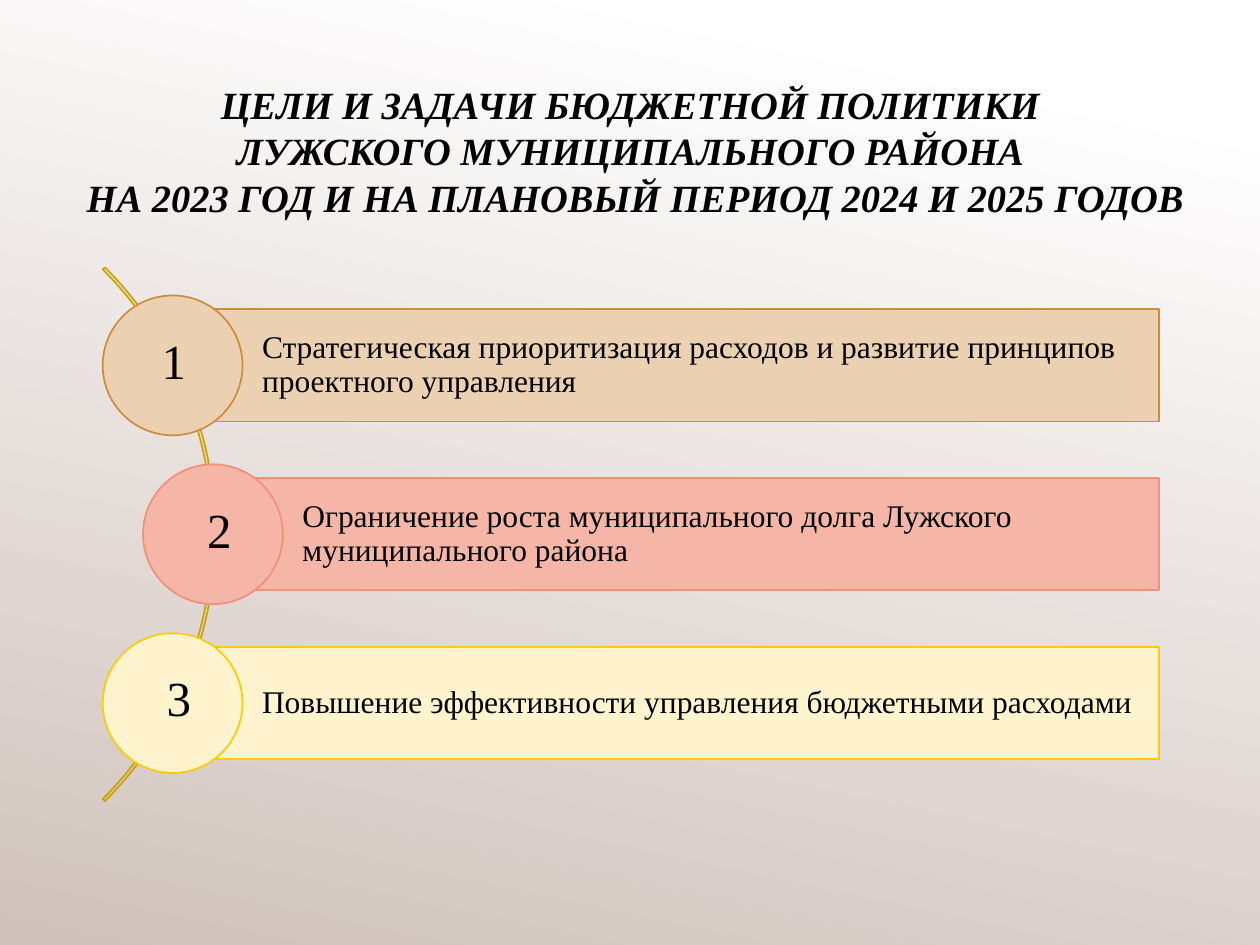
from dataclasses import dataclass

from pptx import Presentation
from pptx.dml.color import RGBColor
from pptx.enum import shapes, text
from pptx.util import Inches, Pt


@dataclass(frozen=True)
class Theme:
    font: str = "Times New Roman"
    ink: str = "000000"
    arc: str = "CCA206"
    backdrop: tuple = ((0.1, "FFFFFF"), (1.0, "D0C2BC"))
    backdrop_angle: int = 258  # counter-clockwise
    title_size: int = 22
    goal_size: int = 18
    number_size: int = 28
    line_width: int = 1


TITLE = (
    "ЦЕЛИ И ЗАДАЧИ БЮДЖЕТНОЙ ПОЛИТИКИ \v"
    "ЛУЖСКОГО МУНИЦИПАЛЬНОГО РАЙОНА \v"
    "НА 2023 ГОД И НА ПЛАНОВЫЙ ПЕРИОД 2024 И 2025 ГОДОВ"
)

# circle centre x, number centre x, fill, line, wording
GOALS = [
    (1.37, 1.38, "EBD1B2", "CE8D3E",
     "Стратегическая приоритизация расходов и развитие принципов проектного управления"),
    (1.69, 1.74, "F5B6A7", "F0917B",
     "Ограничение роста муниципального долга Лужского муниципального района"),
    (1.37, 1.42, "FFF4CE", "FFCA08",
     "Повышение эффективности управления бюджетными расходами"),
]
FIRST_Y, MIDDLE_Y = 2.9, 4.24
PITCH = MIDDLE_Y - FIRST_Y
BAR_RIGHT, BAR_HEIGHT = 9.2, 0.89
CIRCLE = 1.11
NUMBER_WIDTH, NUMBER_HEIGHT, NUMBER_RISE = 0.4, 0.57, 0.33
ARC_SIZE, ARC_LEFT = 5.99, -4.28


class SlideBuilder:
    def __init__(self, slide, theme):
        self.slide = slide
        self.theme = theme

    def background(self):
        fill = self.slide.background.fill
        fill.gradient()
        fill.gradient_angle = self.theme.backdrop_angle
        for stop, (position, color) in zip(fill.gradient_stops, self.theme.backdrop):
            stop.position = position
            stop.color.rgb = RGBColor.from_string(color)

    def shape(self, kind, left, top, width, height, line, fill=None):
        sp = self.slide.shapes.add_shape(
            kind, Inches(left), Inches(top), Inches(width), Inches(height))
        sp.shadow.inherit = False
        if fill:
            sp.fill.solid()
            sp.fill.fore_color.rgb = RGBColor.from_string(fill)
        else:
            sp.fill.background()
        sp.line.color.rgb = RGBColor.from_string(line)
        sp.line.width = Pt(self.theme.line_width)
        return sp

    def set_text(self, sp, words, size, align, wrap=True):
        tf = sp.text_frame
        tf.word_wrap = wrap
        tf.vertical_anchor = text.MSO_ANCHOR.MIDDLE
        p = tf.paragraphs[0]
        p.text = words
        p.alignment = align
        p.font.name = self.theme.font
        p.font.size = Pt(size)
        p.font.color.rgb = RGBColor.from_string(self.theme.ink)
        return p

    def textbox(self, left, top, width, height, words, size, wrap=True):
        sp = self.slide.shapes.add_textbox(
            Inches(left), Inches(top), Inches(width), Inches(height))
        return self.set_text(sp, words, size, text.PP_ALIGN.CENTER, wrap)

    def title(self, words):
        p = self.textbox(0.35, 0.36, 9.38, 1.67, words, self.theme.title_size)
        p.font.bold = p.font.italic = True

    def arc(self):
        sp = self.shape(shapes.MSO_SHAPE.BLOCK_ARC, ARC_LEFT, MIDDLE_Y - ARC_SIZE / 2,
                        ARC_SIZE, ARC_SIZE, self.theme.arc)
        # angles are in units of 100000 / 60000 degrees: 315 and 45 degrees
        for i, value in enumerate((189, 27, 0.004)):
            sp.adjustments[i] = value

    def bar(self, left, y, fill, line, words):
        sp = self.shape(shapes.MSO_SHAPE.RECTANGLE, left, y - BAR_HEIGHT / 2,
                        BAR_RIGHT - left, BAR_HEIGHT, line, fill)
        p = self.set_text(sp, words, self.theme.goal_size, text.PP_ALIGN.LEFT)
        p.line_spacing = 0.9
        tf = sp.text_frame
        tf.margin_left = Inches(0.71)
        tf.margin_top = tf.margin_right = tf.margin_bottom = Inches(0.05)

    def circle(self, x, y, fill, line):
        self.shape(shapes.MSO_SHAPE.OVAL, x - CIRCLE / 2, y - CIRCLE / 2,
                   CIRCLE, CIRCLE, line, fill)

    def number(self, x, y, value):
        self.textbox(x - NUMBER_WIDTH / 2, y - NUMBER_RISE, NUMBER_WIDTH, NUMBER_HEIGHT,
                     str(value), self.theme.number_size, wrap=False)


def main():
    prs = Presentation()
    prs.slide_width, prs.slide_height = Inches(10), Inches(7.5)
    builder = SlideBuilder(prs.slides.add_slide(prs.slide_layouts[6]), Theme())
    builder.background()
    builder.title(TITLE)
    builder.arc()
    for i, (x, number_x, fill, line, words) in enumerate(GOALS):
        y = FIRST_Y + i * PITCH
        builder.bar(x, y, fill, line, words)
        builder.circle(x, y, fill, line)
        builder.number(number_x, y, i + 1)
    prs.save("out.pptx")


if __name__ == "__main__":
    main()
